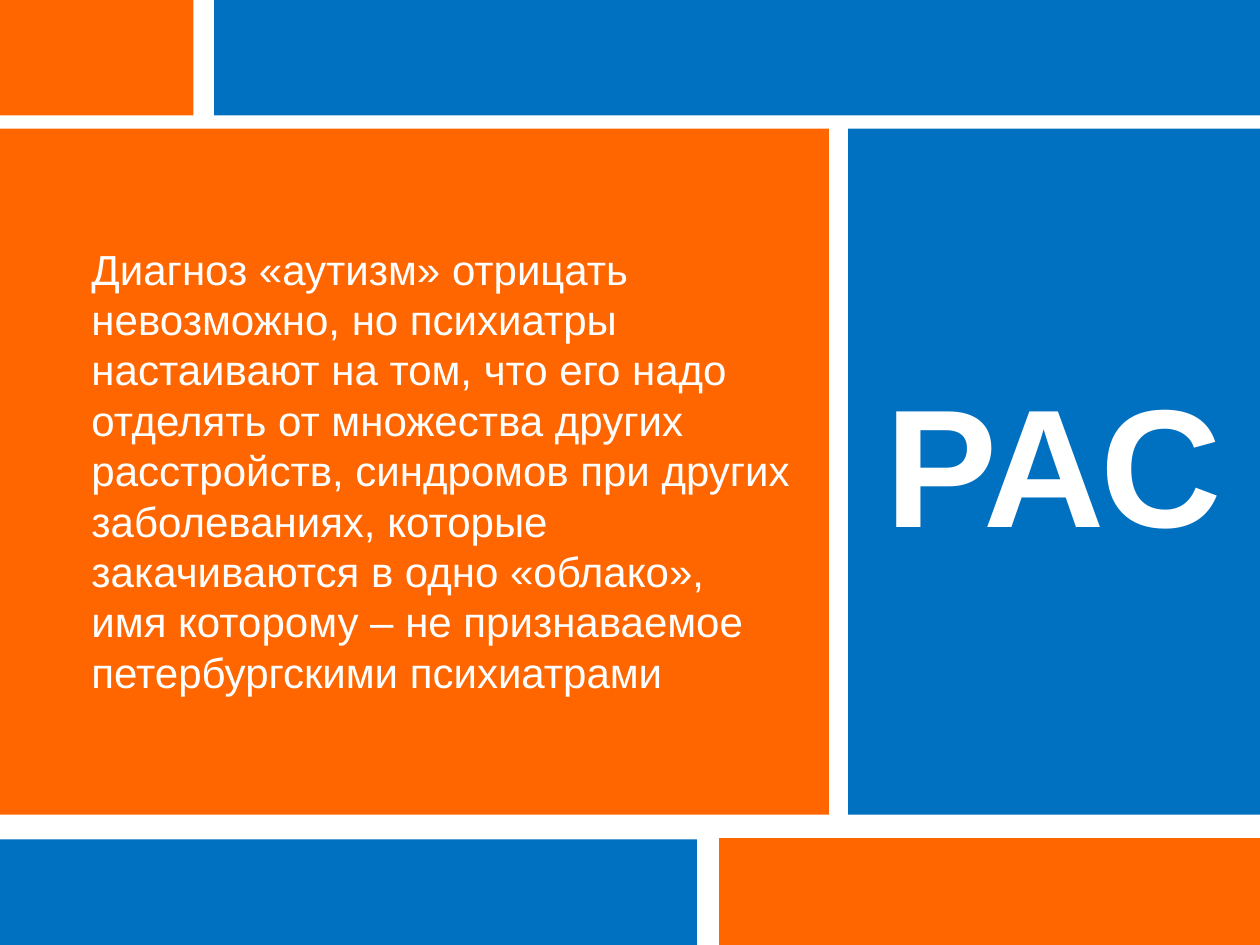
from pptx import Presentation
from pptx.dml.color import RGBColor
from pptx.enum.shapes import MSO_SHAPE
from pptx.enum.text import MSO_AUTO_SIZE, PP_ALIGN
from pptx.util import Pt

INK = {"orange": "FF6600", "blue": "0070C0", "white": "FFFFFF"}

deck = Presentation()
deck.slide_width, deck.slide_height = Pt(720), Pt(540)
slide = deck.slides.add_slide(deck.slide_layouts[6])


def add_text(text, box, size, bold=False, align=PP_ALIGN.LEFT, wrap=True):
    frame = slide.shapes.add_textbox(*map(Pt, box)).text_frame
    frame.word_wrap = wrap
    frame.auto_size = MSO_AUTO_SIZE.SHAPE_TO_FIT_TEXT
    par = frame.paragraphs[0]
    par.text = text
    par.alignment = align
    for run in par.runs:
        run.font.name = "Arial"
        run.font.size = Pt(size)
        run.font.bold = bold
        run.font.color.rgb = RGBColor.from_string(INK["white"])


# Colour blocks: left, top, width, height
blocks = [
    ("orange", -1.4, 73.5, 475, 392),
    ("blue", -1.4, 479.6, 399.6, 61.2),
    ("orange", 0, 0, 110.6, 66),
    ("blue", 122.4, 0, 597.6, 66),
    ("orange", 411, 479, 310.3, 61.2),
    ("blue", 484.6, 73.5, 235.4, 392),
]
for ink, *box in blocks:
    block = slide.shapes.add_shape(MSO_SHAPE.RECTANGLE, *map(Pt, box))
    block.shadow.inherit = False
    block.fill.solid()
    block.fill.fore_color.rgb = RGBColor.from_string(INK[ink])
    block.line.fill.background()

# Body text
add_text(
    "Диагноз «аутизм» отрицать невозможно, но психиатры настаивают на том, "
    "что его надо отделять от множества других расстройств, синдромов при "
    "других заболеваниях, которые закачиваются в одно «облако», \n"
    "имя которому – не признаваемое петербургскими психиатрами",
    (45.2, 135.4, 426, 269.3), size=24)

# Title
add_text("РАС", (498.2, 201.6, 208, 123.8), size=96, bold=True,
         align=PP_ALIGN.CENTER, wrap=False)

deck.save("out.pptx")
